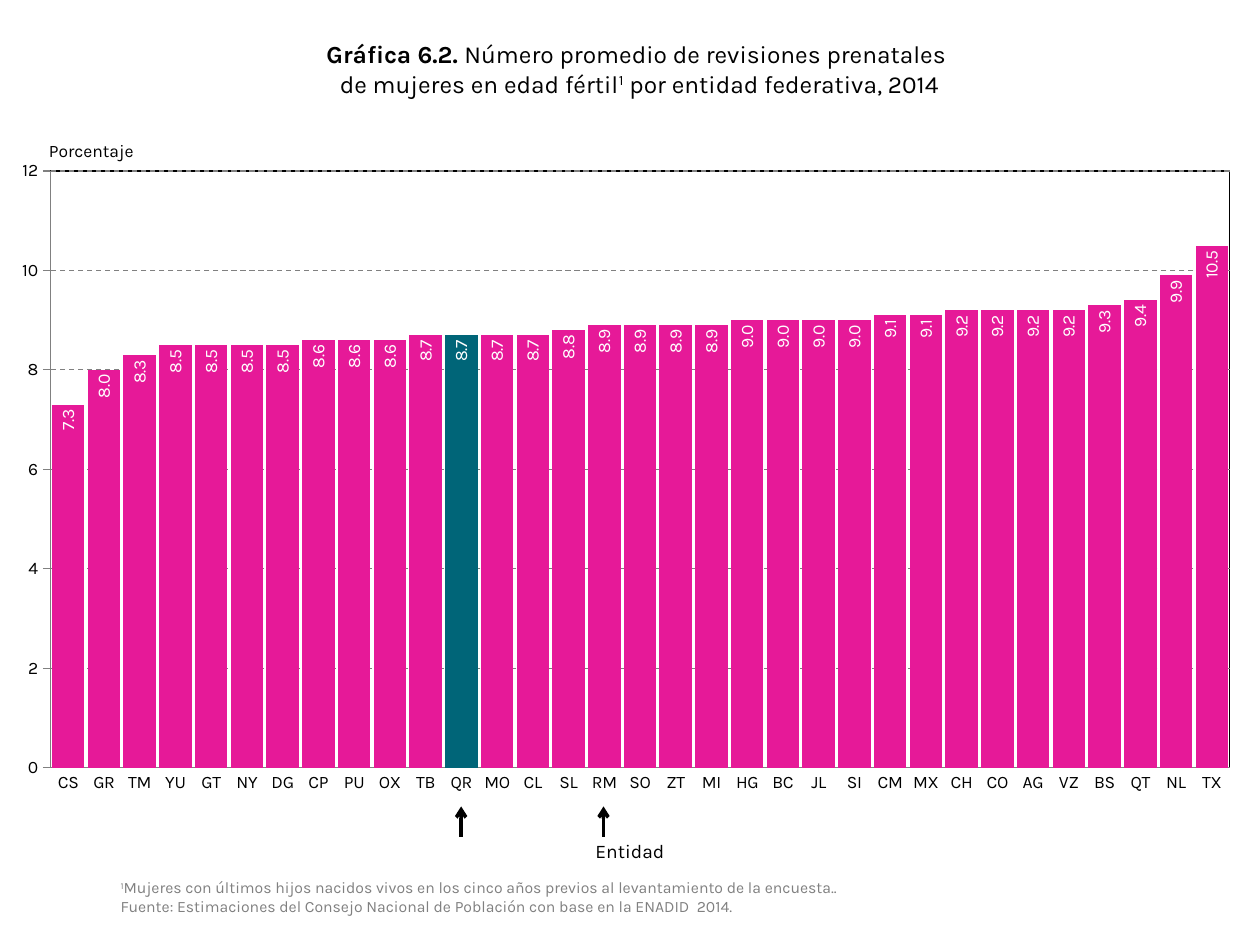
from pptx import Presentation
from pptx.chart.data import CategoryChartData
from pptx.dml.color import RGBColor
from pptx.enum.chart import XL_CHART_TYPE, XL_LABEL_POSITION, XL_TICK_MARK
from pptx.enum.dml import MSO_LINE
from pptx.enum.shapes import MSO_CONNECTOR
from pptx.enum.text import MSO_ANCHOR, PP_ALIGN
from pptx.oxml import parse_xml
from pptx.oxml.ns import nsdecls, qn
from pptx.util import Inches, Pt

LEFT, CENTER = PP_ALIGN.LEFT, PP_ALIGN.CENTER
TOP, MIDDLE = MSO_ANCHOR.TOP, MSO_ANCHOR.MIDDLE
COLUMN, INSIDE_END = XL_CHART_TYPE.COLUMN_CLUSTERED, XL_LABEL_POSITION.INSIDE_END
NO_TICK, TICK_OUT = XL_TICK_MARK.NONE, XL_TICK_MARK.OUTSIDE
FONT, BLACK, GRAY, WHITE = "Karla", "000000", "808080", "FFFFFF"
PINK, TEAL = "E61998", "006578"


def rgb(value):
    return RGBColor.from_string(value)


def add_text(s, lines, at, size=10, color=BLACK, align=LEFT, anchor=TOP, breaks=False):
    """Each line is a list of (text, style); style is "", "bold" or "super"."""
    tf = s.shapes.add_textbox(*[Inches(v) for v in at]).text_frame
    tf.word_wrap = True
    tf.vertical_anchor = anchor
    p = tf.paragraphs[0]
    for i, line in enumerate(lines):
        if i and breaks:
            p.add_line_break()
        elif i:
            p = tf.add_paragraph()
        p.alignment = align
        for text, style in line:
            r = p.add_run()
            r.text = text
            r.font.name, r.font.size = FONT, Pt(size)
            r.font.color.rgb = rgb(color)
            r.font.bold = style == "bold"
            if style == "super":
                r._r.get_or_add_rPr().set("baseline", "30000")


prs = Presentation()
prs.slide_width, prs.slide_height = Inches(10), Inches(7.5)
s = prs.slides.add_slide(prs.slide_layouts[6])

# Title
add_text(s, [[("Gráfica 6.2. ", "bold"), ("Número promedio de revisiones prenatales ", "")],
             [("de mujeres en edad fértil", ""), ("1", "super"),
              (" por entidad federativa, 2014", "")]],
         (0.9, 0.26, 8.35, 0.57), size=14, align=CENTER, anchor=MIDDLE, breaks=True)

# Chart data
states = ("CS GR TM YU GT NY DG CP PU OX TB QR MO CL SL RM SO ZT MI HG BC JL SI "
          "CM MX CH CO AG VZ BS QT NL TX").split()
checkups = [7.3, 8, 8.3, 8.5, 8.5, 8.5, 8.5, 8.6, 8.6, 8.6, 8.7, 8.7, 8.7, 8.7, 8.8,
            8.9, 8.9, 8.9, 8.9, 9, 9, 9, 9, 9.1, 9.1, 9.2, 9.2, 9.2, 9.2, 9.3, 9.4,
            9.9, 10.5]
data = CategoryChartData(number_format="0.0")
data.categories = states
data.add_series("Revisiones prenatales", checkups)
chart = s.shapes.add_chart(COLUMN, Inches(0), Inches(1.18), Inches(10), Inches(5.37),
                           data).chart
chart.has_legend = chart.has_title = False
chart.font.name, chart.font.size = FONT, Pt(10)
chart.font.color.rgb = rgb(BLACK)

# Columns, with one state highlighted
plot = chart.plots[0]
plot.gap_width = 10
plot.vary_by_categories = False
series = plot.series[0]
series.invert_if_negative = False
highlight = series.points[states.index("QR")]
for item, color in ((series, PINK), (highlight, TEAL)):
    item.format.fill.solid()
    item.format.fill.fore_color.rgb = rgb(color)

# Upright value labels
labels = series.data_labels
labels.show_value = True
labels.position = INSIDE_END
labels.number_format, labels.number_format_is_linked = "0.0", False
labels.font.name, labels.font.size = FONT, Pt(10)
labels.font.color.rgb = rgb(WHITE)
body = labels._element.find(qn("c:txPr")).find(qn("a:bodyPr"))
body.set("rot", "-5400000")
body.set("vert", "horz")

# Axes and gridlines
cat_axis, val_axis = chart.category_axis, chart.value_axis
cat_axis.major_tick_mark = NO_TICK
val_axis.major_tick_mark = TICK_OUT
val_axis.minimum_scale, val_axis.maximum_scale, val_axis.major_unit = 0, 12, 2
val_axis.tick_labels.number_format = "0"
val_axis.tick_labels.number_format_is_linked = False
grid = val_axis.major_gridlines.format.line
for line in (cat_axis.format.line, val_axis.format.line, grid):
    line.color.rgb = rgb(GRAY)
    line.width = Pt(0.75)
grid.dash_style = MSO_LINE.DASH

# Plot area position and frame
area = chart._chartSpace.chart.plotArea
for old in area.findall(qn("c:layout")):
    area.remove(old)
place = "".join(f'<c:{tag} val="{val}"/>' for tag, val in (
    ("layoutTarget", "inner"), ("xMode", "edge"), ("yMode", "edge"),
    ("x", 0.04), ("y", 0.033), ("w", 0.936), ("h", 0.882)))
area.insert(0, parse_xml(f'<c:layout {nsdecls("c")}><c:manualLayout>{place}'
                         '</c:manualLayout></c:layout>'))
area.append(parse_xml(f'<c:spPr {nsdecls("c", "a")}><a:noFill/><a:ln w="9525"><a:solidFill>'
                      f'<a:srgbClr val="{BLACK}"/></a:solidFill></a:ln></c:spPr>'))

# Axis titles and footnotes
add_text(s, [[("Porcentaje", "")]], (0.29, 1.06, 1.89, 0.27))
add_text(s, [[("Entidad", "")]], (4.42, 6.61, 1.16, 0.29), size=11, align=CENTER)
add_text(s, [[("1", "super"), ("Mujeres con últimos hijos nacidos vivos en los cinco años "
                               "previos al levantamiento de la encuesta..", "")],
             [("Fuente: Estimaciones del Consejo Nacional de Población con base en la "
               "ENADID  2014.", "")]],
         (0.86, 6.92, 8.74, 0.4), size=9, color=GRAY)

# Arrows below two states
for x in (3.66, 4.79):
    arrow = s.shapes.add_connector(MSO_CONNECTOR.STRAIGHT, Inches(x), Inches(6.64),
                                   Inches(x), Inches(6.4))
    arrow.line.color.rgb = rgb(BLACK)
    arrow.line.width = Pt(2)
    arrow.line._get_or_add_ln().append(
        parse_xml(f'<a:tailEnd {nsdecls("a")} type="arrow"/>'))
    arrow._element.spPr.append(parse_xml(f'<a:effectLst {nsdecls("a")}/>'))

prs.save("out.pptx")
